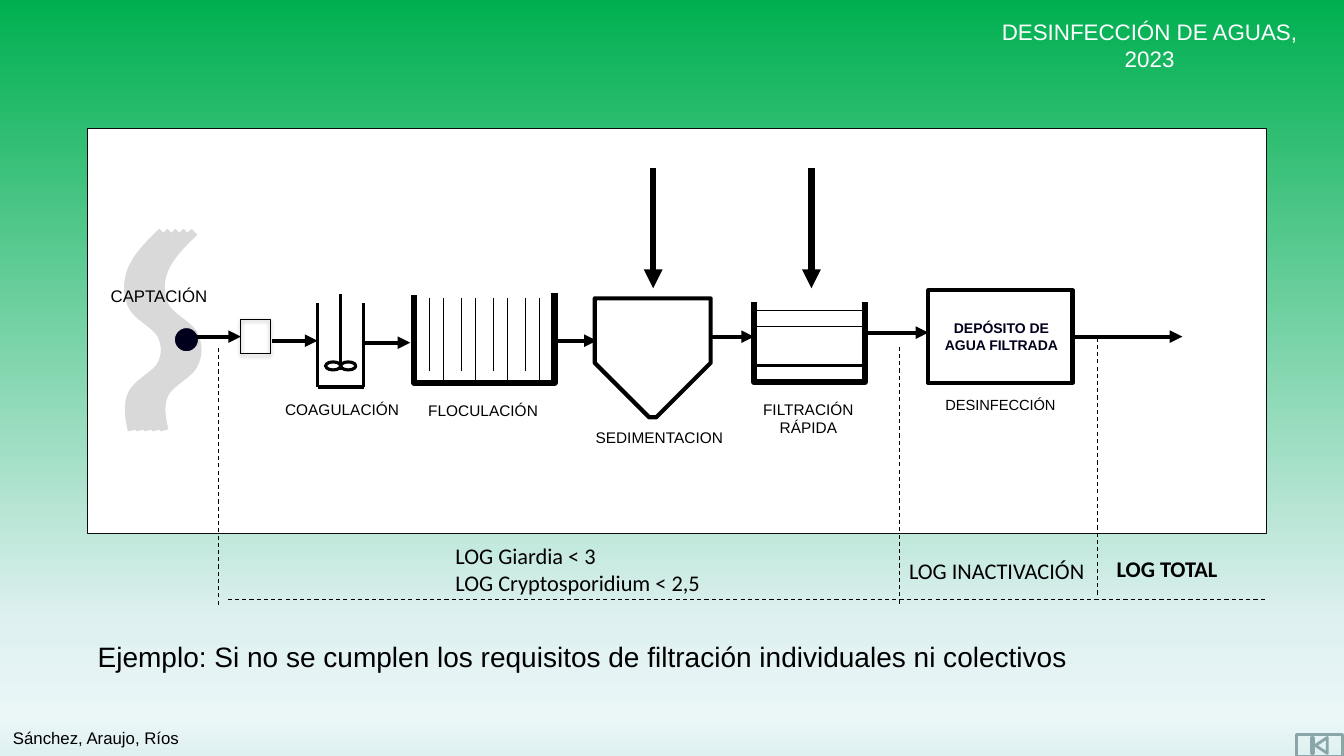
from lxml import etree
from pptx import Presentation
from pptx import util as u
from pptx.dml.color import RGBColor
from pptx.enum import dml, shapes, text
from pptx.oxml import parse_xml
from pptx.oxml.ns import qn

W, H = 40 / 3, 7.5
BLACK, WHITE = RGBColor(0, 0, 0), RGBColor(255, 255, 255)
NAVY, RIVER = RGBColor(0, 0, 0x1C), RGBColor(0xD9, 0xD9, 0xD9)
FRAME, BUTTON = RGBColor(0x0D, 0x0D, 0x0D), RGBColor(0x8A, 0xA6, 0xA8)
NS = 'xmlns:a="http://schemas.openxmlformats.org/drawingml/2006/main"'
BACKGROUND = [(0, "00B050"), (83, "E0F1F2"), (95, "EBF6F7"), (100, "E0F1F2")]

# Content: text, (left, top, width, height), format
LABELS = [
    ("DESINFECCIÓN DE AGUAS, 2023", (9.82, 0.13, 3.17, 0.37), dict(size=16, color=WHITE, center=True)),
    ("CAPTACIÓN", (1, 2.79, 1.26, 0.3), dict(size=12)),
    ("COAGULACIÓN", (2.73, 3.92, 1.42, 0.29), {}),
    ("FLOCULACIÓN", (4.15, 3.93, 1.47, 0.29), {}),
    ("SEDIMENTACION", (5.81, 4.2, 1.66, 0.29), {}),
    ("FILTRACIÓN RÁPIDA", (7.31, 3.92, 1.42, 0.47), dict(center=True)),
    ("DEPÓSITO DE AGUA FILTRADA", (9.22, 3.12, 1.43, 0.44),
     dict(size=10, color=NAVY, bold=True, center=True)),
    ("DESINFECCIÓN", (9.28, 3.88, 1.34, 0.28), dict(size=10.5)),
    ("LOG Giardia < 3\nLOG Cryptosporidium < 2,5", (4.42, 5.33, 2.72, 0.64), dict(size=16, font="Calibri")),
    ("LOG INACTIVACIÓN", (8.92, 5.48, 2.08, 0.37), dict(size=16, font="Calibri")),
    ("LOG TOTAL", (10.98, 5.46, 1.5, 0.37), dict(size=16, font="Calibri", bold=True)),
    ("Ejemplo: Si no se cumplen los requisitos de filtración individuales ni colectivos",
     (0.87, 6.3, 11.18, 0.44), dict(size=20)),
    ("Sánchez, Araujo, Ríos", (0.03, 7.17, 4.65, 0.3), dict(size=12)),
]
# Flow arrows between stages: start x, end x, y
FLOWS = [(2.7, 3.15, 3.38), (3.62, 4.07, 3.4), (5.51, 5.92, 3.38), (7.06, 7.48, 3.34), (8.55, 9.21, 3.3)]
DOSING_X = [6.48, 8.05]
# Dashed limits of the log credits: x1, y1, x2, y2
LIMITS = [(2.17, 3.45, 2.17, 6.01), (8.92, 3.44, 8.92, 6), (10.89, 3.35, 10.89, 5.91), (2.26, 5.95, 12.56, 5.95)]
# River bank: start point, then two controls and an end for each curve
BANK = [
    (0.35, 2.3),
    (0.22, 2.42), (0.1, 2.55), (0.05, 2.67), (0, 2.79), (0, 2.92), (0.05, 3.03),
    (0.1, 3.14), (0.3, 3.23), (0.34, 3.32), (0.39, 3.42), (0.39, 3.52), (0.34, 3.62),
    (0.3, 3.71), (0.1, 3.8), (0.05, 3.91), (0, 4.02), (0.02, 4.14), (0.05, 4.27),
]

prs = Presentation()
prs.slide_width, prs.slide_height = u.Inches(W), u.Inches(H)
s = prs.slides.add_slide(prs.slide_layouts[6])


def label(words, box, size=11, font="Arial", color=BLACK, bold=False, center=False):
    tf = s.shapes.add_textbox(*map(u.Inches, box)).text_frame
    tf.word_wrap = True
    tf.auto_size = text.MSO_AUTO_SIZE.SHAPE_TO_FIT_TEXT
    for i, line_text in enumerate(words.split("\n")):
        p = tf.add_paragraph() if i else tf.paragraphs[0]
        p.alignment = text.PP_ALIGN.CENTER if center else text.PP_ALIGN.LEFT
        r = p.add_run()
        r.text = line_text
        r.font.size, r.font.name, r.font.bold = u.Pt(size), font, bold
        r.font.color.rgb = color


def style(sp, width, color=BLACK, fill=None):
    sp.shadow.inherit = False
    if fill is None:
        sp.fill.background()
    else:
        sp.fill.solid()
        sp.fill.fore_color.rgb = fill
    sp.line.color.rgb, sp.line.width = color, u.Pt(width)
    return sp


def shape(kind, box, width, color=BLACK, fill=None):
    return style(s.shapes.add_shape(kind, *map(u.Inches, box)), width, color, fill)


def rect(*args, **kw):
    return shape(shapes.MSO_SHAPE.RECTANGLE, *args, **kw)


def outline(points, width, color=BLACK, curved=False):
    emu = [(u.Inches(x), u.Inches(y)) for x, y in points]
    fb = s.shapes.build_freeform(*emu[0])
    fb.add_line_segments(emu[1:], close=False)
    sp = style(fb.convert_to_shape(), width, color)
    if curved:  # every three line points become one Bezier curve
        steps = list(sp._element.iter(qn("a:lnTo")))
        for i in range(0, len(steps), 3):
            curve = etree.Element(qn("a:cubicBezTo"))
            steps[i].addprevious(curve)
            for step in steps[i:i + 3]:
                curve.append(step[0])
                step.getparent().remove(step)
    return sp


def line(x1, y1, x2, y2, width=0.75, arrow=False, dash=False):
    c = s.shapes.add_connector(shapes.MSO_CONNECTOR.STRAIGHT, *map(u.Inches, (x1, y1, x2, y2)))
    c.line.color.rgb, c.line.width = BLACK, u.Pt(width)
    if dash:
        c.line.dash_style = dml.MSO_LINE.DASH
    if arrow:
        etree.SubElement(c.line._get_or_add_ln(), qn("a:tailEnd"), type="triangle")
    etree.SubElement(c._element.spPr, qn("a:effectLst"))
    return c


# Background gradient
fill = s.background.fill
fill.gradient()
grad = s.background._cSld.find(".//" + qn("a:gradFill"))
stops = "".join(f'<a:gs pos="{p * 1000}"><a:srgbClr val="{c}"/></a:gs>' for p, c in BACKGROUND)
grad.getparent().replace(grad, parse_xml(
    f'<a:gradFill {NS} rotWithShape="1"><a:gsLst>{stops}</a:gsLst><a:lin ang="5400000" scaled="0"/></a:gradFill>'))

# Navigation button and diagram panel
shape(shapes.MSO_SHAPE.ACTION_BUTTON_BEGINNING, (12.86, 7.29, 0.46, 0.21), 2, BUTTON)
rect((0.87, 1.27, 11.69, 4.02), 0.75, FRAME, WHITE)

# River and intake
for i in (3, 4, 0, 1, 2):
    outline([(1.26 + 0.08 * i + x, y) for x, y in BANK], 6, RIVER, curved=True)
shape(shapes.MSO_SHAPE.OVAL, (1.73, 3.25, 0.24, 0.24), 0.75, RIVER, NAVY)
intake = rect((2.39, 3.17, 0.29, 0.34), 0.75)
effects = intake._element.spPr.find(qn("a:effectLst"))
effects.append(parse_xml(
    f'<a:outerShdw {NS} blurRad="{u.Pt(3.1)}" dist="{u.Pt(1.6)}" dir="5400000" rotWithShape="0">'
    '<a:srgbClr val="000000"><a:alpha val="38000"/></a:srgbClr></a:outerShdw>'))
line(1.94, 3.34, 2.39, 3.34, 3, arrow=True).end_connect(intake, 1)

# Coagulation tank with its mixer
for x in (3.15, 3.61):
    line(x, 3.01, x, 3.84, 2.25)
line(3.15, 3.84, 3.61, 3.84, 2.25)
for x in (3.23, 3.38):
    shape(shapes.MSO_SHAPE.OVAL, (x, 3.59, 0.15, 0.08), 2.25)
line(3.38, 3.67, 3.38, 2.92, 2.25)

# Flocculation tank: baffles alternate short and long
outline([(4.11, 2.93), (4.11, 3.8), (5.5, 3.8), (5.5, 2.91)], 4.5)
for i in range(4):
    for offset, bottom in ((0, 3.68), (0.14, 3.8)):
        x = 4.26 + 0.95 / 3 * i + offset
        line(x, 2.96, x, bottom)

# Settling tank
settler = shape(shapes.MSO_SHAPE.SNIP_2_SAME_RECTANGLE, (5.9, 2.96, 1.15, 1.18), 3)
settler.rotation = 180
settler.adjustments[0], settler.adjustments[1] = 0.47, 0

# Rapid filter: layers inside an open tank
for top, height, width in ((3.08, 0.55, 1), (3.63, 0.16, 2.25), (3.24, 0.39, 0.75)):
    rect((7.48, top, 1.1, height), width)
outline([(7.48, 3), (7.48, 3.79), (8.58, 3.79), (8.58, 3)], 4.5)

# Filtered water reservoir and outlet
reservoir = rect((9.21, 2.88, 1.43, 0.92), 3)
line(10.64, 3.34, 11.73, 3.34, 3, arrow=True).begin_connect(reservoir, 3)

# Flow, dosing and limits
for x1, x2, y in FLOWS:
    line(x1, y, x2, y, 3, arrow=True)
for x in DOSING_X:
    line(x, 1.67, x, 2.86, 4.5, arrow=True)
for ends in LIMITS:
    line(*ends, dash=True)

# Texts
for words, box, fmt in LABELS:
    label(words, box, **fmt)

prs.save("out.pptx")
